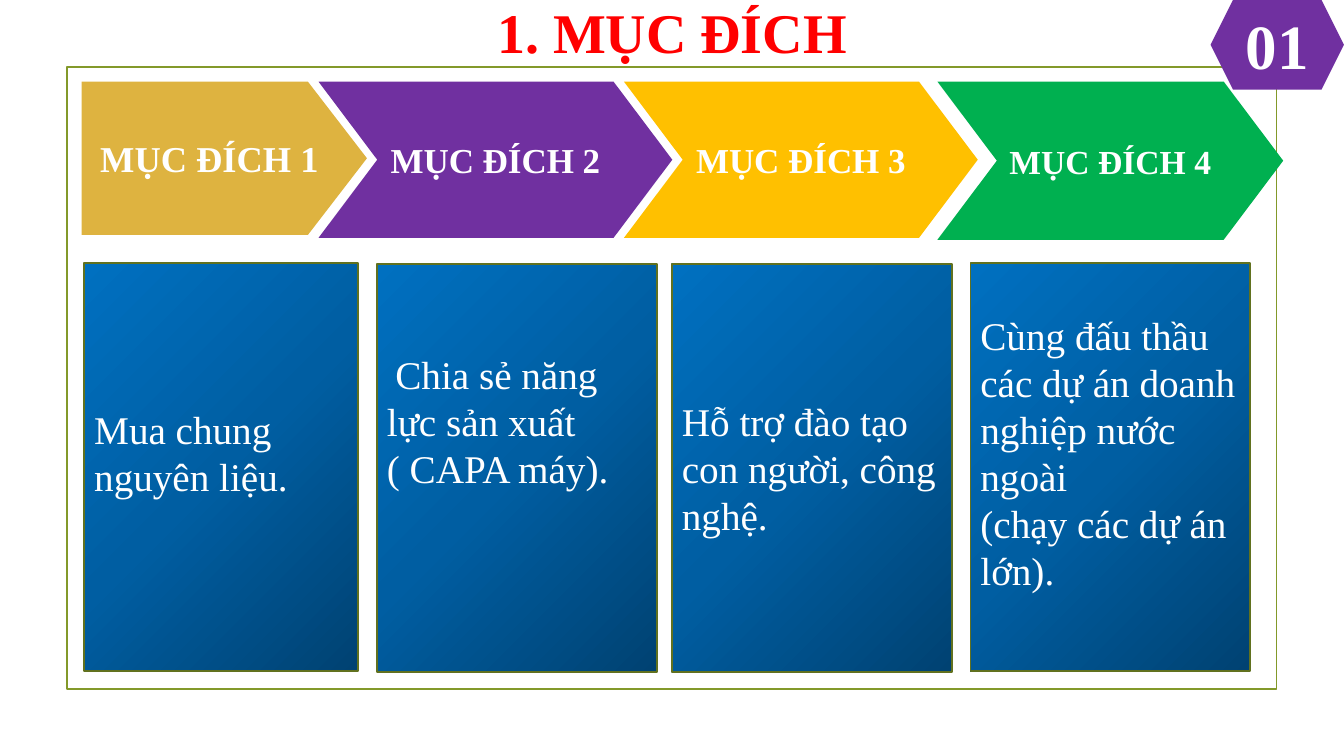
from dataclasses import dataclass

from pptx import Presentation
from pptx.dml.color import RGBColor
from pptx.enum.shapes import MSO_SHAPE
from pptx.enum.text import MSO_ANCHOR, PP_ALIGN
from pptx.oxml import parse_xml
from pptx.oxml.ns import nsdecls
from pptx.util import Pt


@dataclass(frozen=True)
class Theme:
    font: str = "Times New Roman"
    white: str = "FFFFFF"
    red: str = "FF0000"
    gold: str = "DEB340"
    purple: str = "7030A0"
    amber: str = "FFC000"
    green: str = "00B050"
    frame: str = "83992A"
    card_line: str = "61711F"
    card_stops: tuple = ((0, "004272"), (50, "005EA2"), (100, "0070C0"))
    line_width: float = 1.25
    title_size: int = 40
    number_size: int = 45
    card_size: int = 28


THEME = Theme()

# Heading: box, fill, type size; the first is a pentagon, the rest chevrons
HEADINGS = [
    ("MỤC ĐÍCH 1", (58.3, 58.3, 203.8, 109.5), THEME.gold, 26),
    ("MỤC ĐÍCH 2", (227.5, 58.3, 252.7, 111.6), THEME.purple, 25),
    ("MỤC ĐÍCH 3", (445.7, 58.3, 252.7, 111.6), THEME.amber, 25),
    ("MỤC ĐÍCH 4", (669.6, 58.3, 247, 113), THEME.green, 24),
]

# Card: paragraphs, box, bottom inset, first-line indent
CARDS = [
    (["Mua chung nguyên liệu."], (60.2, 187.9, 195.8, 291.6), 25, 0),
    (["Chia sẻ năng lực sản xuất", "( CAPA máy)."],
     (269.3, 188.5, 199.8, 291.6), 71, 6),
    (["Hỗ trợ đào tạo con người, công nghệ."],
     (480, 188.5, 199.8, 291.6), 3.6, 0),
    (["Cùng đấu thầu các dự án doanh nghiệp nước ngoài",
      "(chạy các dự án lớn)."], (693.2, 187.9, 199.8, 291.6), 25, 0),
]


def color(value):
    return RGBColor.from_string(value)


def write(shape, lines, size, ink=THEME.white, bold=False,
          align=PP_ALIGN.CENTER, wrap=False):
    frame = shape.text_frame
    frame.word_wrap = wrap
    frame.vertical_anchor = MSO_ANCHOR.MIDDLE
    for index, line in enumerate(lines):
        paragraph = frame.add_paragraph() if index else frame.paragraphs[0]
        paragraph.alignment = align
        run = paragraph.add_run()
        run.text = line
        run.font.name = THEME.font
        run.font.size = Pt(size)
        run.font.bold = bold
        run.font.color.rgb = color(ink)
    return frame


def add_preset(slide, kind, box, fill=None, line=None):
    shape = slide.shapes.add_shape(kind, *(Pt(length) for length in box))
    shape.shadow.inherit = False
    if fill:
        shape.fill.solid()
        shape.fill.fore_color.rgb = color(fill)
    else:
        shape.fill.background()
    if line:
        shape.line.color.rgb = color(line)
        shape.line.width = Pt(THEME.line_width)
    else:
        shape.line.fill.background()
    return shape


def fill_gradient(shape):
    stops = "".join(
        f'<a:gs pos="{position * 1000}"><a:srgbClr val="{value}"/></a:gs>'
        for position, value in THEME.card_stops)
    gradient = parse_xml(
        f'<a:gradFill {nsdecls("a")} rotWithShape="1"><a:gsLst>{stops}</a:gsLst>'
        '<a:lin ang="13500000" scaled="0"/></a:gradFill>')
    properties = shape.element.spPr
    properties.replace(properties.find(
        "{http://schemas.openxmlformats.org/drawingml/2006/main}noFill"), gradient)


def add_title(slide, box):
    title = slide.shapes.add_textbox(*(Pt(length) for length in box))
    write(title, ["1. MỤC ĐÍCH"], THEME.title_size, THEME.red, bold=True, wrap=True)


def add_heading(slide, box, kind, text, fill, size):
    heading = add_preset(slide, kind, box, fill)
    heading.adjustments[0] = 0.385 if kind == MSO_SHAPE.PENTAGON else 0.376
    frame = write(heading, [text], size, bold=True)
    frame.margin_left = frame.margin_right = Pt(8.6)
    frame.margin_top = frame.margin_bottom = Pt(5.8)


def add_card(slide, box, lines, bottom_inset, indent):
    card = add_preset(slide, MSO_SHAPE.RECTANGLE, box, line=THEME.card_line)
    fill_gradient(card)
    frame = write(card, lines, THEME.card_size, align=PP_ALIGN.LEFT, wrap=True)
    frame.margin_bottom = Pt(bottom_inset)
    if indent:
        properties = frame.paragraphs[0]._p.get_or_add_pPr()
        properties.set("indent", str(Pt(indent)))


def add_number(slide, box):
    badge = add_preset(slide, MSO_SHAPE.HEXAGON, box, THEME.purple)
    write(badge, ["01"], THEME.number_size, bold=True)


def main():
    presentation = Presentation()
    presentation.slide_width, presentation.slide_height = Pt(960), Pt(540)
    slide = presentation.slides.add_slide(presentation.slide_layouts[6])

    # Frame and title
    add_preset(slide, MSO_SHAPE.RECTANGLE, (47.8, 48, 864, 444), line=THEME.frame)
    add_title(slide, (102, 0, 756, 44))

    # Row of arrows
    for index, (text, box, fill, size) in enumerate(HEADINGS):
        kind = MSO_SHAPE.CHEVRON if index else MSO_SHAPE.PENTAGON
        add_heading(slide, box, kind, text, fill, size)

    # Cards below the arrows
    for lines, box, bottom_inset, indent in CARDS:
        add_card(slide, box, lines, bottom_inset, indent)

    # Section number in the corner
    add_number(slide, (864.7, 0, 95.3, 64))
    presentation.save("out.pptx")


if __name__ == "__main__":
    main()
